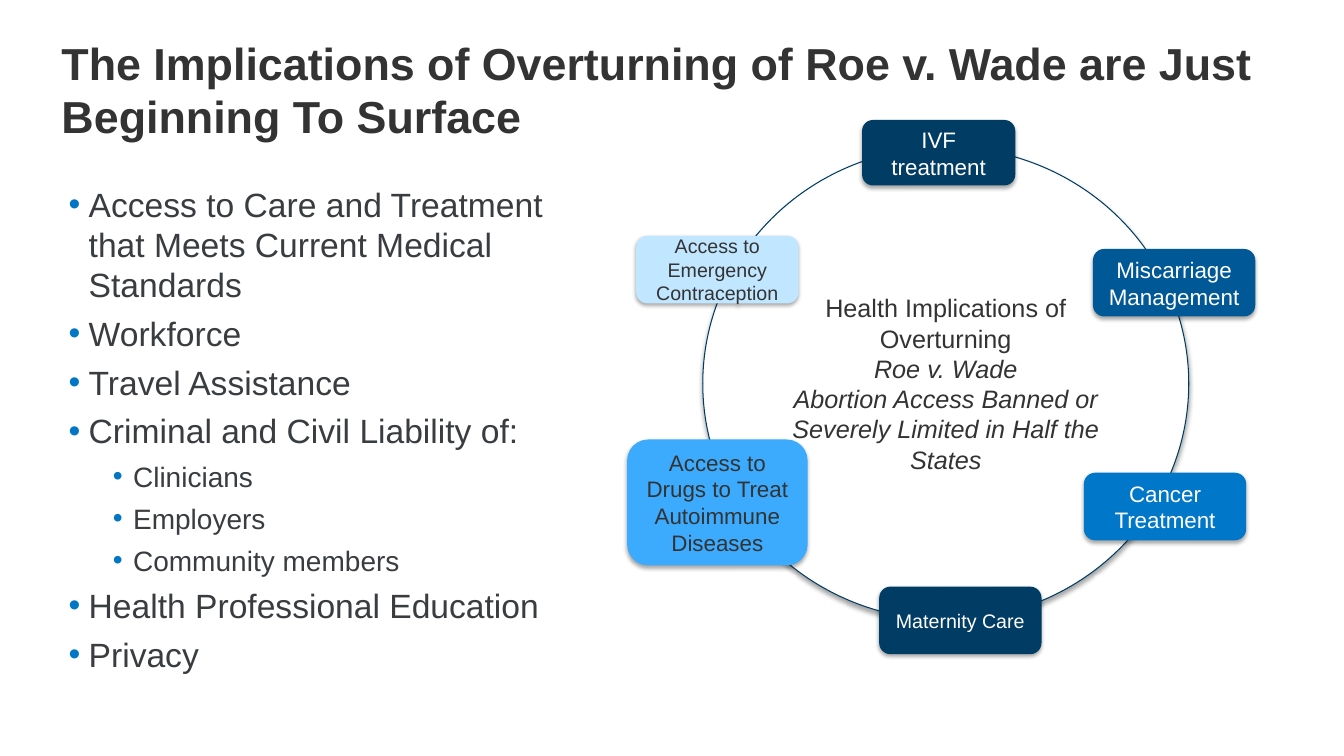
import pptx
import pptx.util
import pptx.dml.color
import pptx.enum.shapes
import pptx.enum.text
import pptx.oxml
import pptx.oxml.ns

WIDTH, HEIGHT = 13.33, 7.5
FONT = "Arial"
COLORS = {
    "title": "333333", "body": "393D40", "bullet": "0076C4", "ring": "003B62",
    "white": "FFFFFF", "navy": "003C64", "blue": "005996", "bright": "0077C8",
    "sky": "3CABFD", "pale": "C1E6FF", "shadow": "000000",
}
TITLE_BOX = (0.41 + 0.1, 0.3, 12.32, 0.94)
LIST_BOX = (0.41, 1.77, 5.58, 5.15)
CYCLE_BOX = (6.22, 1.19, 6.23, 5.3)
TITLE = "The Implications of Overturning of Roe v. Wade are Just Beginning To Surface"
TOPICS = [
    (0, "Access to Care and Treatment that Meets Current Medical Standards"),
    (0, "Workforce"),
    (0, "Travel Assistance"),
    (0, "Criminal and Civil Liability of:"),
    (1, "Clinicians"),
    (1, "Employers"),
    (1, "Community members"),
    (0, "Health Professional Education"),
    (0, "Privacy"),
]
LEVELS = [(24, 0.37), (20, 0.81)]
HUB = [
    ("Health Implications of", False),
    ("Overturning", False),
    ("Roe v. Wade", True),
    ("Abortion Access Banned or Severely Limited in Half the States", True),
]
RING = (0.75, 0.27, 4.82, 4.69)
NODES = [
    ("IVF treatment", (2.33, 0, 1.52, 0.65), "navy", "white", 16),
    ("Miscarriage Management", (4.62, 1.28, 1.61, 0.67), "blue", "white", 16),
    ("Cancer Treatment", (4.53, 3.5, 1.61, 0.67), "bright", "white", 16),
    ("Access to Drugs to Treat Autoimmune Diseases", (0, 3.17, 1.79, 1.25), "sky", "title", 16),
    ("Access to Emergency Contraception", (0.09, 1.15, 1.61, 0.67), "pale", "title", 14),
    ("Maternity Care", (2.5, 4.63, 1.61, 0.67), "navy", "white", 14),
]


def rgb(name):
    return pptx.dml.color.RGBColor.from_string(COLORS[name])


def place(s, box):
    s.left, s.top, s.width, s.height = [pptx.util.Inches(v) for v in box]


def add_run(p, text, size, color, bold=False, italic=False):
    r = p.add_run()
    r.text = text
    r.font.name = FONT
    r.font.size = pptx.util.Pt(size)
    r.font.bold = bold
    r.font.italic = italic
    r.font.color.rgb = rgb(color)


def add_bullet(p, indent):
    pPr = p._p.get_or_add_pPr()
    pPr.set("marL", str(pptx.util.Inches(indent)))
    pPr.set("indent", str(pptx.util.Inches(-0.2)))
    ns = pptx.oxml.ns.nsdecls("a")
    for xml in (
        f'<a:buClr {ns}><a:srgbClr val="{COLORS["bullet"]}"/></a:buClr>',
        f'<a:buFont {ns} typeface="{FONT}"/>',
        f'<a:buChar {ns} char="•"/>',
    ):
        pPr.append(pptx.oxml.parse_xml(xml))


def add_shadow(s):
    s.shadow.inherit = False
    effects = s._element.spPr.find(pptx.oxml.ns.qn("a:effectLst"))
    effects.append(pptx.oxml.parse_xml(
        f'<a:outerShdw {pptx.oxml.ns.nsdecls("a")} blurRad="{pptx.util.Pt(3.1)}" '
        f'dist="{pptx.util.Pt(1.8)}" dir="5400000" rotWithShape="0">'
        f'<a:srgbClr val="{COLORS["shadow"]}"><a:alpha val="35000"/></a:srgbClr></a:outerShdw>'))


def add_cycle_shape(slide, kind, origin, box, fill):
    left, top, width, height = box
    lengths = (origin[0] + left, origin[1] + top, width, height)
    s = slide.shapes.add_shape(kind, *[pptx.util.Inches(v) for v in lengths])
    s.fill.solid()
    s.fill.fore_color.rgb = rgb(fill)
    s.line.fill.background()
    add_shadow(s)
    s.text_frame.word_wrap = True
    s.text_frame.vertical_anchor = pptx.enum.text.MSO_ANCHOR.MIDDLE
    return s


def add_paragraph(tf, index):
    return tf.add_paragraph() if index else tf.paragraphs[0]


def fill_title(slide, box):
    s = slide.shapes.title
    place(s, box)
    tf = s.text_frame
    tf.word_wrap = True
    tf.auto_size = pptx.enum.text.MSO_AUTO_SIZE.NONE
    tf.vertical_anchor = pptx.enum.text.MSO_ANCHOR.TOP
    p = tf.paragraphs[0]
    p.alignment = pptx.enum.text.PP_ALIGN.LEFT
    add_run(p, TITLE, 32, "title", bold=True)


def fill_list(slide, box):
    s = slide.placeholders[1]
    place(s, box)
    tf = s.text_frame
    tf.word_wrap = True
    tf.auto_size = pptx.enum.text.MSO_AUTO_SIZE.NONE
    for i, (level, text) in enumerate(TOPICS):
        size, indent = LEVELS[level]
        p = add_paragraph(tf, i)
        p.level = level
        p.space_before = pptx.util.Pt(0)
        p.space_after = pptx.util.Pt(6)
        add_bullet(p, indent)
        add_run(p, text, size, "body")


def add_cycle(slide, box):
    kinds = pptx.enum.shapes.MSO_SHAPE
    center = pptx.enum.text.PP_ALIGN.CENTER
    ring = add_cycle_shape(slide, kinds.OVAL, box, RING, "white")
    ring.line.color.rgb = rgb("ring")
    ring.line.width = pptx.util.Pt(0.75)
    for i, (text, italic) in enumerate(HUB):
        p = add_paragraph(ring.text_frame, i)
        p.alignment = center
        add_run(p, text, 18, "title", italic=italic)
    for text, node_box, fill, color, size in NODES:
        node = add_cycle_shape(slide, kinds.ROUNDED_RECTANGLE, box, node_box, fill)
        p = node.text_frame.paragraphs[0]
        p.alignment = center
        add_run(p, text, size, color)


def main():
    prs = pptx.Presentation()
    prs.slide_width = pptx.util.Inches(WIDTH)
    prs.slide_height = pptx.util.Inches(HEIGHT)
    slide = prs.slides.add_slide(prs.slide_layouts[1])
    fill_title(slide, TITLE_BOX)
    fill_list(slide, LIST_BOX)
    add_cycle(slide, CYCLE_BOX)
    prs.save("out.pptx")


if __name__ == "__main__":
    main()
